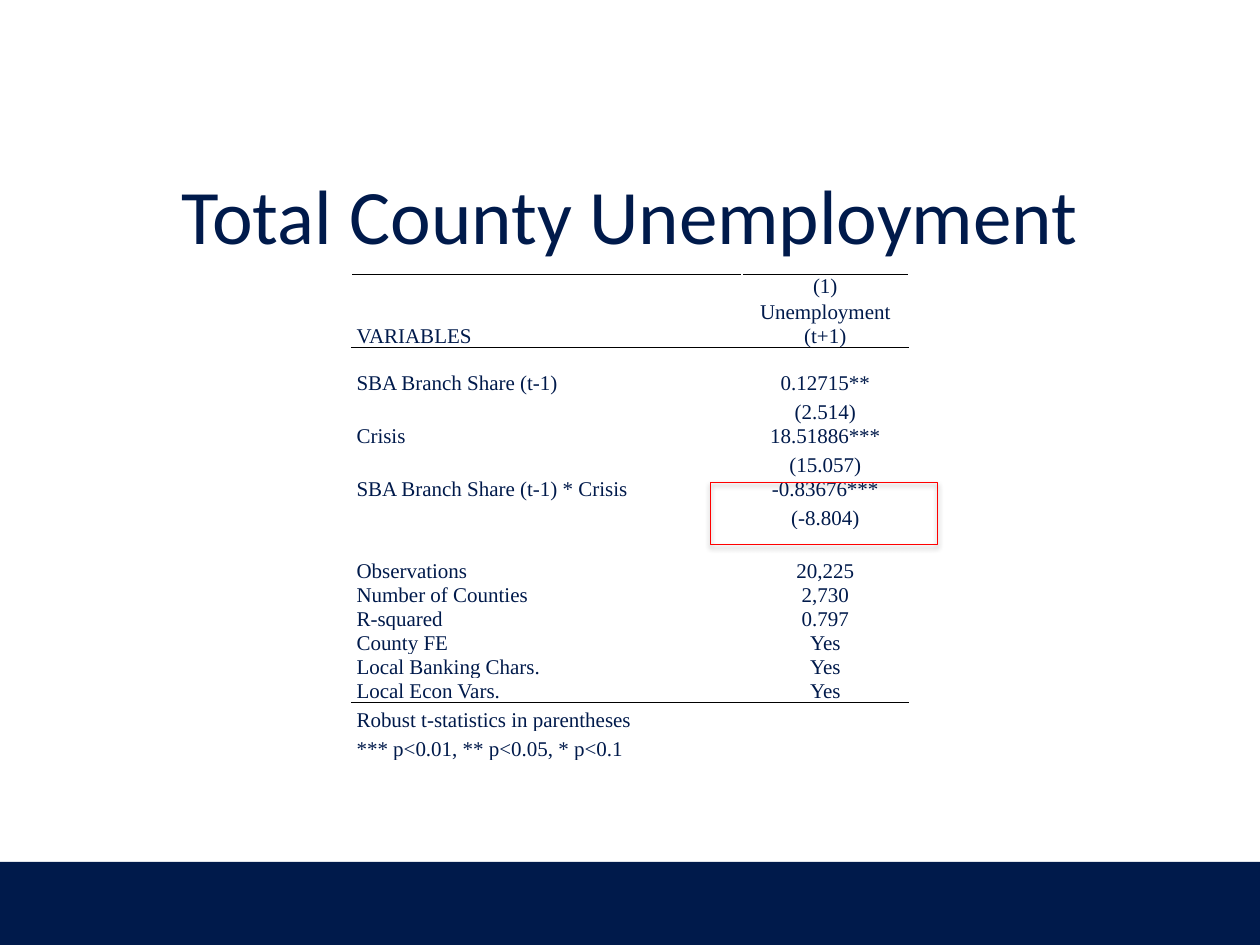
from lxml.etree import SubElement
from pptx import Presentation
from pptx.dml.color import RGBColor
from pptx.enum.shapes import MSO_SHAPE as Shape
from pptx.enum.text import MSO_ANCHOR as Anchor, PP_ALIGN as Align
from pptx.oxml.ns import qn
from pptx.util import Inches, Pt

NAVY, BLACK, RED = "001A4B", "000000", "FF0000"
TABLE_FONT, TABLE_SIZE = "Times New Roman", Pt(12)


def color(code):
    return RGBColor.from_string(code)


def add_border(cell, side):
    """Rule one side of a cell: T for top, B for bottom."""
    line = SubElement(cell._tc.get_or_add_tcPr(), qn(f"a:ln{side}"), w=str(Pt(1)))
    fill = SubElement(line, qn("a:solidFill"))
    SubElement(fill, qn("a:srgbClr"), val=BLACK)


deck = Presentation()
deck.slide_width, deck.slide_height = Inches(10), Inches(7.5)
page = deck.slides.add_slide(deck.slide_layouts[5])

# Footer band
band_top = Inches(6.84)
band = page.shapes.add_shape(Shape.RECTANGLE, 0, band_top, deck.slide_width,
                             deck.slide_height - band_top)
band.shadow.inherit = False
band.fill.solid()
band.fill.fore_color.rgb = color(NAVY)
band.line.fill.background()

# Title
title = page.shapes.title
title_place = {"left": 0, "top": Inches(1.07), "width": deck.slide_width, "height": Inches(1.25)}
for name, value in title_place.items():
    setattr(title, name, value)
title.text_frame.text = "Total County Unemployment"
title.text_frame.vertical_anchor = Anchor.MIDDLE
para = title.text_frame.paragraphs[0]
para.alignment = Align.CENTER
span = para.runs[0]
for name, value in {"name": "Calibri", "size": Pt(44)}.items():
    setattr(span.font, name, value)
span.font.color.rgb = color(NAVY)

# Regression table: label, value, row height
LOW, TALL, DOUBLE = 0.19, 0.23, 0.39
results = [
    ("", "(1)", LOW),
    ("VARIABLES", "Unemployment (t+1)", DOUBLE),
    ("", "", LOW),
    ("SBA Branch Share (t-1)", "0.12715**", LOW),
    ("", "(2.514)", TALL),
    ("Crisis", "18.51886***", LOW),
    ("", "(15.057)", TALL),
    ("SBA Branch Share (t-1) * Crisis", "-0.83676***", LOW),
    ("", "(-8.804)", TALL),
    ("", "", TALL),
    ("Observations", "20,225", LOW),
    ("Number of Counties", "2,730", LOW),
    ("R-squared", "0.797", LOW),
    ("County FE", "Yes", LOW),
    ("Local Banking Chars.", "Yes", LOW),
    ("Local Econ Vars.", "Yes", LOW),
    ("Robust t-statistics in parentheses", "", TALL),
    ("*** p<0.01, ** p<0.05, * p<0.1", "", TALL),
]
rules_above = {0, 2, 16}
column_widths = [3.1, 1.32]
cell_format = {"margin_left": Inches(0.04), "margin_right": Inches(0.04), "margin_top": 0,
               "margin_bottom": 0, "vertical_anchor": Anchor.BOTTOM}

frame = page.shapes.add_table(len(results), len(column_widths), Inches(2.79), Inches(2.18),
                              Inches(sum(column_widths)),
                              Inches(sum(height for *_, height in results)))
table = frame.table
table.first_row = table.horz_banding = False
for column, width in zip(table.columns, column_widths):
    column.width = Inches(width)

for r, (*texts, height) in enumerate(results):
    table.rows[r].height = Inches(height)
    for c, text in enumerate(texts):
        cell = table.cell(r, c)
        for name, value in cell_format.items():
            setattr(cell, name, value)
        if r in rules_above:
            add_border(cell, "T")
        if r + 1 in rules_above:
            add_border(cell, "B")
        cell.fill.background()
        para = cell.text_frame.paragraphs[0]
        para.alignment = (Align.LEFT, Align.CENTER)[c]
        if text:
            span = para.add_run()
            span.text = text
            span.font.name, span.font.size = TABLE_FONT, TABLE_SIZE
            span.font.color.rgb = color(NAVY)
        else:
            end = SubElement(para._p, qn("a:endParaRPr"), sz=str(int(TABLE_SIZE.pt * 100)))
            SubElement(end, qn("a:latin"), typeface=TABLE_FONT)

# Highlight around the interaction term
highlight = page.shapes.add_shape(Shape.RECTANGLE, Inches(5.64), Inches(3.83),
                                  Inches(1.8), Inches(0.49))
highlight.fill.background()
highlight.line.color.rgb = color(RED)
highlight.line.width = Pt(0.75)
highlight.shadow.inherit = False
effects = highlight._element.spPr.find(qn("a:effectLst"))
shadow = SubElement(effects, qn("a:outerShdw"), blurRad=str(Pt(3.1)), dist=str(Pt(1.8)),
                    dir=str(90 * 60000), rotWithShape="0")
tint = SubElement(shadow, qn("a:srgbClr"), val=BLACK)
SubElement(tint, qn("a:alpha"), val=str(35 * 1000))

deck.save("out.pptx")
